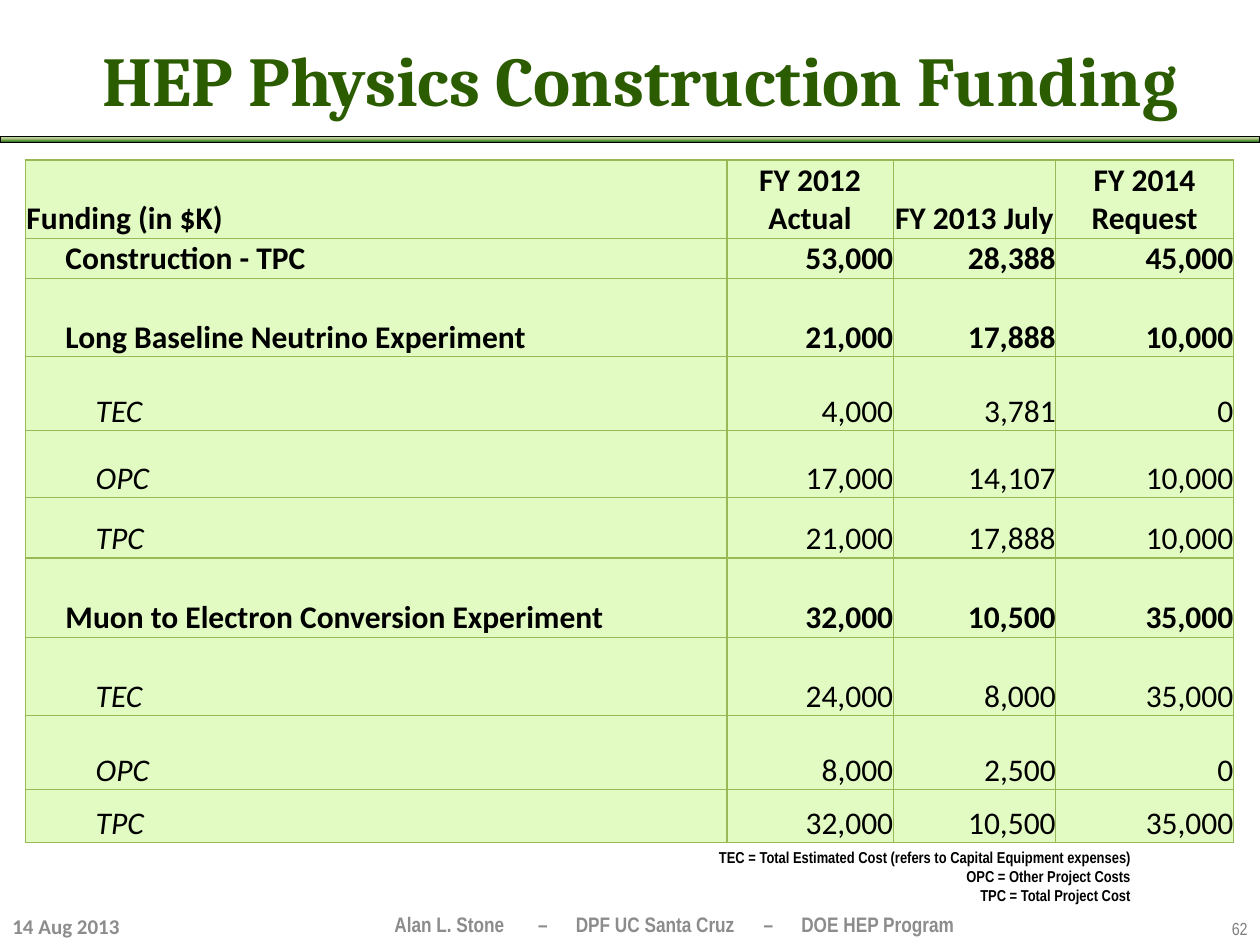
from lxml import etree
from pptx import Presentation
from pptx.dml.color import RGBColor
from pptx.enum.shapes import MSO_SHAPE
from pptx.enum.text import MSO_ANCHOR, PP_ALIGN
from pptx.oxml import parse_xml
from pptx.oxml.ns import nsdecls, qn
from pptx.util import Inches, Pt

LEFT, CENTER, RIGHT = PP_ALIGN.LEFT, PP_ALIGN.CENTER, PP_ALIGN.RIGHT
TOP, MIDDLE, BOTTOM = MSO_ANCHOR.TOP, MSO_ANCHOR.MIDDLE, MSO_ANCHOR.BOTTOM
RECT = MSO_SHAPE.RECTANGLE

HEADER = ["Funding (in $K)", "FY 2012 Actual", "FY 2013 July", "FY 2014 Request"]
# Level, label, yearly values; level 1 is a bold heading, level 2 an italic detail
FUNDING = [
    (1, "Construction - TPC", "53,000", "28,388", "45,000"),
    (1, "Long Baseline Neutrino Experiment", "21,000", "17,888", "10,000"),
    (2, "TEC", "4,000", "3,781", "0"),
    (2, "OPC", "17,000", "14,107", "10,000"),
    (2, "TPC", "21,000", "17,888", "10,000"),
    (1, "Muon to Electron Conversion Experiment", "32,000", "10,500", "35,000"),
    (2, "TEC", "24,000", "8,000", "35,000"),
    (2, "OPC", "8,000", "2,500", "0"),
    (2, "TPC", "32,000", "10,500", "35,000"),
]
COL_WIDTHS = [5.57, 1.32, 1.29, 1.41]
ROW_HEIGHTS = [0.62, 0.32, 0.62, 0.59, 0.53, 0.48, 0.63, 0.62, 0.59, 0.42]
LABEL_INDENTS = [0.01, 0.32, 0.56]
NOTES = [
    "TEC = Total Estimated Cost (refers to Capital Equipment expenses)",
    "OPC = Other Project Costs",
    "TPC = Total Project Cost",
]


def rgb(value):
    return RGBColor.from_string(value)


class SlideBuilder:
    title_font, body_font, small_font = "Cambria", "Calibri", "Arial Narrow"
    title_color, black, gray, page_gray = "2B5C00", "000000", "8C8C8C", "808080"
    cell_fill, border = "E2FBC2", "98B955"
    rule_stops = [(0, "DDEBCF"), (50, "9CB86E"), (100, "156B13")]

    def __init__(self, slide):
        self.slide = slide

    def add_run(self, p, text, font, size, color, bold=False, italic=False):
        r = p.add_run()
        r.text = text
        r.font.name, r.font.size = font, Pt(size)
        r.font.bold, r.font.italic = bold, italic
        r.font.color.rgb = rgb(color)

    def text(self, box, lines, font, size, color, align=LEFT, anchor=TOP,
             bold=True, wrap=True, tabs=(), inset=0.1):
        """Add a text box with one paragraph per line; tabs are in inches."""
        tf = self.slide.shapes.add_textbox(*map(Inches, box)).text_frame
        tf.word_wrap, tf.vertical_anchor = wrap, anchor
        tf.margin_left = Inches(inset)
        for i, line in enumerate(lines):
            p = tf.add_paragraph() if i else tf.paragraphs[0]
            p.alignment = align
            if tabs:
                tab_list = etree.SubElement(p._p.get_or_add_pPr(), qn("a:tabLst"))
                for pos in tabs:
                    etree.SubElement(tab_list, qn("a:tab"),
                                     pos=str(Inches(pos)), algn="l")
            self.add_run(p, line, font, size, color, bold)

    def gradient_rule(self, *box):
        sp = self.slide.shapes.add_shape(RECT, *map(Inches, box))
        sp.shadow.inherit = False
        stops = "".join(f'<a:gs pos="{pos * 1000}"><a:srgbClr val="{color}"/></a:gs>'
                        for pos, color in self.rule_stops)
        sp._element.spPr.find(qn("a:prstGeom")).addnext(parse_xml(
            f'<a:gradFill {nsdecls("a")}><a:gsLst>{stops}</a:gsLst>'
            '<a:lin ang="5400000" scaled="0"/></a:gradFill>'))
        sp.line.color.rgb = rgb(self.black)
        sp.line.width = Pt(0.5)

    def cell(self, cell, text, align, indent=0, bold=False, italic=False):
        tc_pr = cell._tc.get_or_add_tcPr()
        for side in ("lnL", "lnR", "lnT", "lnB"):
            tc_pr.append(parse_xml(
                f'<a:{side} {nsdecls("a")} w="{Pt(0.75)}"><a:solidFill>'
                f'<a:srgbClr val="{self.border}"/></a:solidFill></a:{side}>'))
        cell.fill.solid()
        cell.fill.fore_color.rgb = rgb(self.cell_fill)
        cell.vertical_anchor = BOTTOM
        cell.margin_left = Inches(indent)
        cell.margin_right = cell.margin_top = cell.margin_bottom = 0
        p = cell.text_frame.paragraphs[0]
        p.alignment = align
        self.add_run(p, text, self.body_font, 18, self.black, bold, italic)

    def funding_table(self, left, top):
        box = (left, top, sum(COL_WIDTHS), sum(ROW_HEIGHTS))
        table = self.slide.shapes.add_table(
            len(ROW_HEIGHTS), len(COL_WIDTHS), *map(Inches, box)).table
        table.first_row = table.horz_banding = False
        for col, width in zip(table.columns, COL_WIDTHS):
            col.width = Inches(width)
        for row, height in zip(table.rows, ROW_HEIGHTS):
            row.height = Inches(height)
        for i, (level, label, *values) in enumerate([(0, *HEADER), *FUNDING]):
            detail = level == 2
            self.cell(table.cell(i, 0), label, LEFT, LABEL_INDENTS[level],
                      bold=not detail, italic=detail)
            for j, value in enumerate(values, 1):
                self.cell(table.cell(i, j), value, RIGHT if level else CENTER,
                          bold=not detail)


def main():
    prs = Presentation()
    prs.slide_width, prs.slide_height = Inches(10), Inches(7.5)
    s = SlideBuilder(prs.slides.add_slide(prs.slide_layouts[6]))

    s.gradient_rule(0, 1.08, 10, 0.05)
    s.text((2.58, 7.17, 5.58, 0.33),
           ["Alan L. Stone\t–\tDPF UC Santa Cruz\t–\tDOE HEP Program"],
           s.small_font, 12, s.gray, anchor=MIDDLE,
           tabs=(1.14, 1.44, 2.93, 3.23), inset=0.55)
    s.text((0.3, 0.23, 9.56, 0.79), ["HEP Physics Construction Funding"],
           s.title_font, 40, s.title_color, CENTER, MIDDLE)
    s.funding_table(0.2, 1.27)
    s.text((5.57, 6.68, 3.5, 0.56), NOTES, s.small_font, 9, s.black, RIGHT, wrap=False)
    s.text((0, 7.2, 1.07, 0.3), ["14 Aug 2013"], s.body_font, 12, s.gray, anchor=MIDDLE)
    s.text((9.59, 7.24, 0.41, 0.26), ["62"], s.small_font, 10, s.page_gray, RIGHT,
           bold=False)
    prs.save("out.pptx")


if __name__ == "__main__":
    main()
